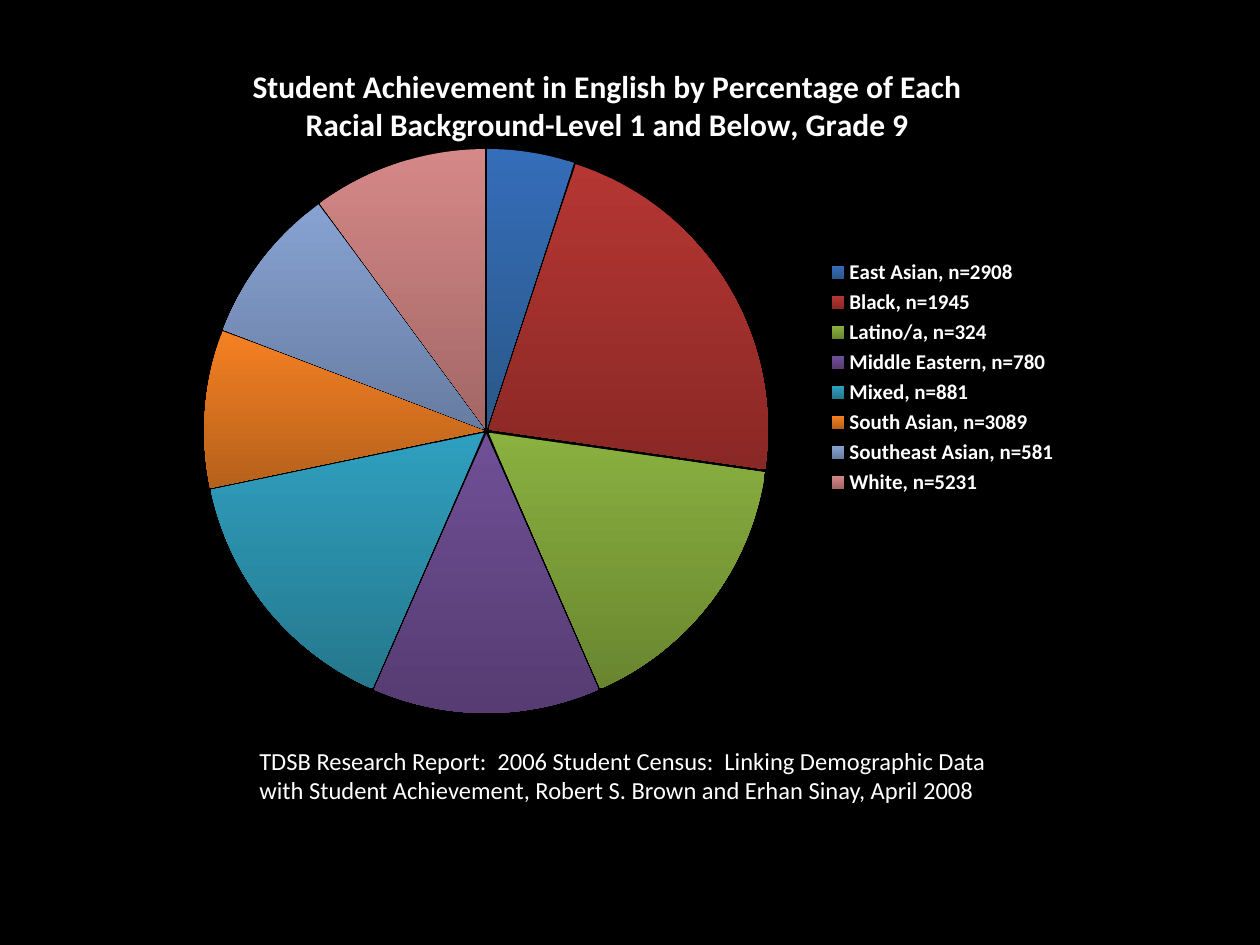
from dataclasses import dataclass

from lxml.etree import SubElement
from pptx import Presentation
from pptx.chart.data import CategoryChartData
from pptx.dml.color import RGBColor
from pptx.enum.chart import XL_CHART_TYPE, XL_LEGEND_POSITION
from pptx.oxml import parse_xml
from pptx.oxml.ns import nsdecls, qn
from pptx.util import Inches, Pt


@dataclass(frozen=True)
class Theme:
    font: str = "Calibri"
    background: str = "000000"
    text: str = "FFFFFF"
    base_size: int = 10
    title_size: int = 18
    legend_size: int = 12
    source_size: int = 14


TITLE = ("Student Achievement in English by Percentage of Each\n"
         "Racial Background-Level 1 and Below, Grade 9")
SOURCE = ("TDSB Research Report:  2006 Student Census:  Linking Demographic Data "
          "with Student Achievement, Robert S. Brown and Erhan Sinay, April 2008")
SLICES = [
    ("East Asian, n=2908", 5, "346DB9", "2A5888"),
    ("Black, n=1945", 22, "B53633", "8A2825"),
    ("Latino/a, n=324", 16, "8AB040", "69862F"),
    ("Middle Eastern, n=780", 13, "6F4F96", "563C72"),
    ("Mixed, n=881", 15, "2F9FBF", "25788D"),
    ("South Asian, n=3089", 9, "F58023", "B5611B"),
    ("Southeast Asian, n=581", 9, "87A2D2", "677CA2"),
    ("White, n=5231", 10, "D48887", "A36766"),
]


class Deck:
    """Hold the theme and current slide, and add styled elements to it."""

    def __init__(self, prs, theme):
        self.theme = theme
        self.s = prs.slides.add_slide(prs.slide_layouts[6])
        fill = self.s.background.fill
        fill.solid()
        fill.fore_color.rgb = RGBColor.from_string(theme.background)

    def style(self, font, size, bold=False):
        font.name = self.theme.font
        font.size = Pt(size)
        font.bold = bold
        font.color.rgb = RGBColor.from_string(self.theme.text)

    def text(self, text, x, y, w, h, size):
        tf = self.s.shapes.add_textbox(
            Inches(x), Inches(y), Inches(w), Inches(h)).text_frame
        tf.word_wrap = True
        tf.text = text
        self.style(tf.paragraphs[0].runs[0].font, size)

    def layout(self, parent, **values):
        old = parent.find(qn("c:layout"))
        if old is not None:
            parent.remove(old)
        layout = parse_xml(f"<c:layout {nsdecls('c')}/>")
        manual = SubElement(layout, qn("c:manualLayout"))
        for tag, value in values.items():
            SubElement(manual, qn(f"c:{tag}")).set("val", str(value))
        tx = parent.find(qn("c:tx"))
        if tx is None:
            parent.insert(0, layout)
        else:
            tx.addnext(layout)

    def pie(self, title, slices, x, y, w, h):
        data = CategoryChartData()
        data.categories = [name for name, *_ in slices]
        data.add_series("Series 1", [value for _, value, *_ in slices])
        chart = self.s.shapes.add_chart(
            XL_CHART_TYPE.PIE, Inches(x), Inches(y), Inches(w), Inches(h), data).chart
        self.style(chart.font, self.theme.base_size)

        tf = chart.chart_title.text_frame
        tf.text = title
        for p in tf.paragraphs:
            self.style(p.runs[0].font, self.theme.title_size, bold=True)
        self.layout(chart.chart_title._element,
                    xMode="edge", yMode="edge", x=0.1, y=0.03)

        chart.has_legend = True
        chart.legend.position = XL_LEGEND_POSITION.RIGHT
        chart.legend.include_in_layout = False
        self.style(chart.legend.font, self.theme.legend_size, bold=True)

        plot = chart.plots[0]
        plot.vary_by_categories = True
        self.layout(plot._element.getparent(), layoutTarget="inner", xMode="edge",
                    yMode="edge", x=0, y=0.16, w=0.72, h=0.84)
        series = plot.series[0]
        series._element.find(qn("c:tx")).addnext(
            parse_xml(f'<c:explosion {nsdecls("c")} val="1"/>'))
        for i, (_, _, *shades) in enumerate(slices):
            fmt = series.points[i].format
            fmt.fill.gradient()
            fmt.fill.gradient_angle = 270
            for stop, shade in zip(fmt.fill.gradient_stops, shades):
                stop.color.rgb = RGBColor.from_string(shade)
            fmt.line.fill.background()


def main():
    prs = Presentation()
    prs.slide_width, prs.slide_height = Inches(10), Inches(7.5)
    theme = Theme()
    deck = Deck(prs, theme)
    deck.pie(TITLE, SLICES, 1.25, 0.33, 7.25, 5.33)
    deck.text(SOURCE, 1.96, 5.87, 6, 0.88, theme.source_size)
    prs.save("out.pptx")


if __name__ == "__main__":
    main()
